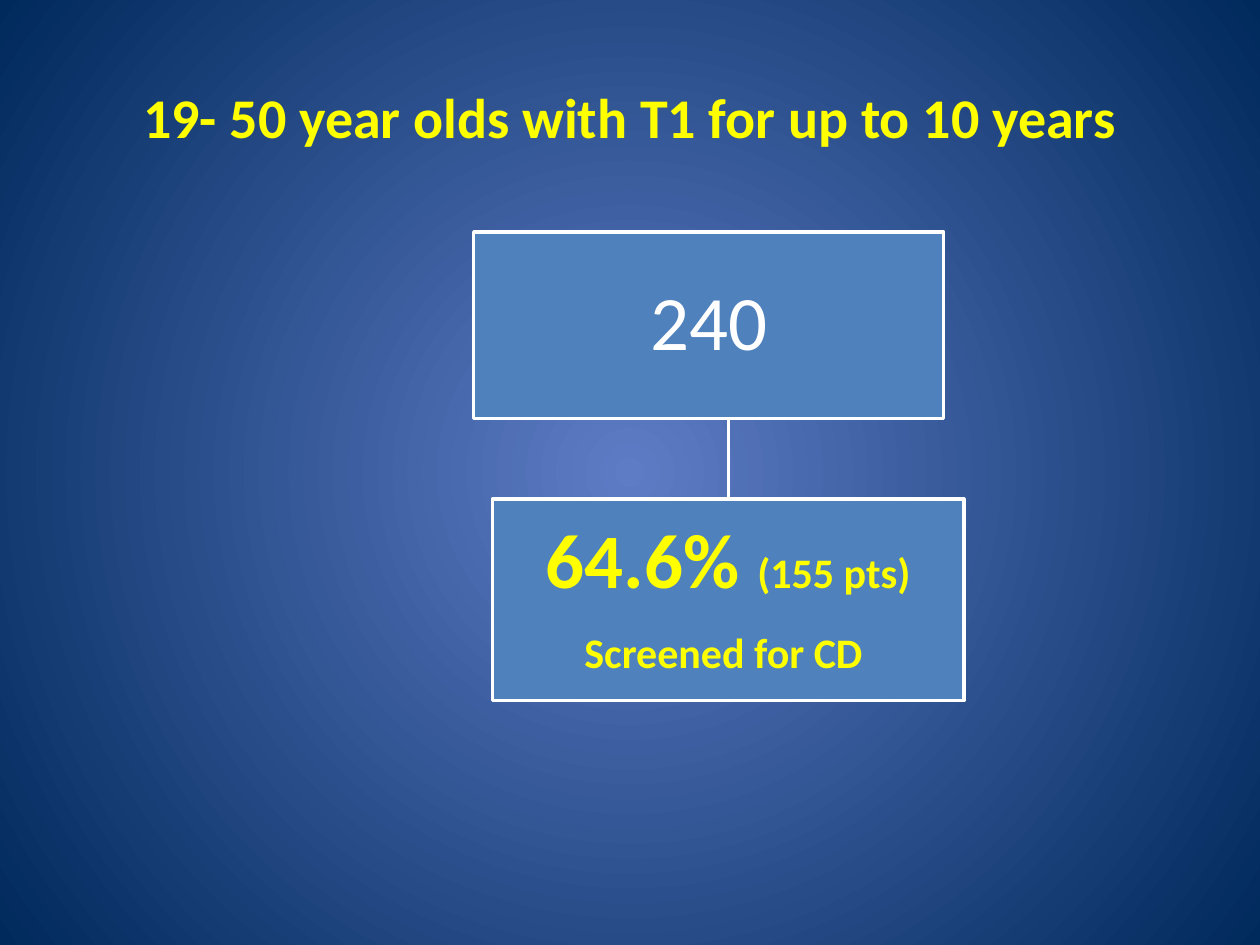
from lxml import etree
from pptx import Presentation
from pptx import util as u
from pptx.dml.color import RGBColor
from pptx.enum import shapes, text
from pptx.oxml.ns import qn

FONT = "Calibri"
WHITE, YELLOW, BLUE = "FFFFFF", "FFFF00", "4F81BD"
CENTER_BLUE, EDGE_BLUE = "5E7CC5", "00295C"


def colour(value):
    """Turn a hex string into a colour."""
    return RGBColor.from_string(value)


def style_font(font, size, value, bold=False):
    """Set the face, size, colour and weight of a font."""
    font.name, font.size, font.bold = FONT, u.Pt(size), bold
    font.color.rgb = colour(value)


def outline(shape):
    """Give a shape a white line and no shadow."""
    shape.shadow.inherit = False
    shape.line.color.rgb = colour(WHITE)
    shape.line.width = u.Pt(2)


def paint_background(page):
    """Fill the page with a gradient that spreads from its centre."""
    fill = page.background.fill
    fill.gradient()
    for stop, value in zip(fill.gradient_stops, (CENTER_BLUE, EDGE_BLUE)):
        stop.color.rgb = colour(value)
    gradient = page.element.find(".//" + qn("a:gradFill"))
    linear = gradient.find(qn("a:lin"))
    circle = etree.Element(qn("a:path"), {"path": "circle"})
    etree.SubElement(circle, qn("a:fillToRect"), dict.fromkeys("ltrb", "50000"))
    gradient.replace(linear, circle)


def place_title(page, box, wording):
    """Move the title placeholder into the box and fill it."""
    title = page.shapes.title
    title.left, title.top, title.width, title.height = map(u.Inches, box)
    frame = title.text_frame
    frame.text = wording
    frame.vertical_anchor = text.MSO_ANCHOR.MIDDLE
    para = frame.paragraphs[0]
    para.alignment = text.PP_ALIGN.CENTER
    style_font(para.font, 32, YELLOW, True)


def draw_link(page, upper, lower):
    """Draw the bent line from the bottom of one box to the top of the next."""
    start_x, start_y = upper[0] + upper[2] / 2, upper[1] + upper[3]
    end_x, end_y = lower[0] + lower[2] / 2, lower[1]
    builder = page.shapes.build_freeform(u.Inches(start_x), u.Inches(start_y))
    corners = [(u.Inches(end_x), u.Inches(y)) for y in (start_y, end_y)]
    builder.add_line_segments(corners, close=False)
    link = builder.convert_to_shape()
    link.fill.background()
    outline(link)


def draw_node(page, box, lines, value, bold=False):
    """Draw a chart box whose lines are lists of (wording, size) spans."""
    node = page.shapes.add_shape(shapes.MSO_SHAPE.RECTANGLE, *map(u.Inches, box))
    node.fill.solid()
    node.fill.fore_color.rgb = colour(BLUE)
    outline(node)
    frame = node.text_frame
    frame.word_wrap = True
    frame.vertical_anchor = text.MSO_ANCHOR.MIDDLE
    frame.margin_left = frame.margin_right = u.Inches(0.03)
    frame.margin_top = frame.margin_bottom = u.Inches(0.03)
    for index, spans in enumerate(lines):
        para = frame.add_paragraph() if index else frame.paragraphs[0]
        para.alignment = text.PP_ALIGN.CENTER
        para.line_spacing = 0.9
        first_size = spans[0][1]
        para.space_after = u.Pt(0.35 * first_size)
        style_font(para.font, first_size, value, bold)
        for wording, size in spans:
            span = para.add_run()
            span.text = wording
            if size != first_size:
                span.font.size = u.Pt(size)


def draw_hierarchy(page, box):
    """Place the cohort box, the screened box and their link in the box."""
    left, top, width, height = box
    cohort = (left, top, 3.73, 1.48)
    screened = (left + width - 3.74, top + height - 1.6, 3.74, 1.6)
    draw_link(page, cohort, screened)
    draw_node(page, cohort, [[("240", 44)]], WHITE)
    results = [[("64.6% ", 44), ("(155 pts)", 24)], [("Screened for CD ", 24)]]
    draw_node(page, screened, results, YELLOW, True)


def main():
    """Build and save the deck."""
    deck = Presentation()
    deck.slide_width, deck.slide_height = u.Inches(10), u.Inches(7.5)
    page = deck.slides.add_slide(deck.slide_layouts[5])
    paint_background(page)
    place_title(page, (0.5, 0.3, 9, 1.25), "19- 50 year olds with T1 for up to 10 years")
    draw_hierarchy(page, (3.76, 1.84, 3.89, 3.72))
    deck.save("out.pptx")


if __name__ == "__main__":
    main()
